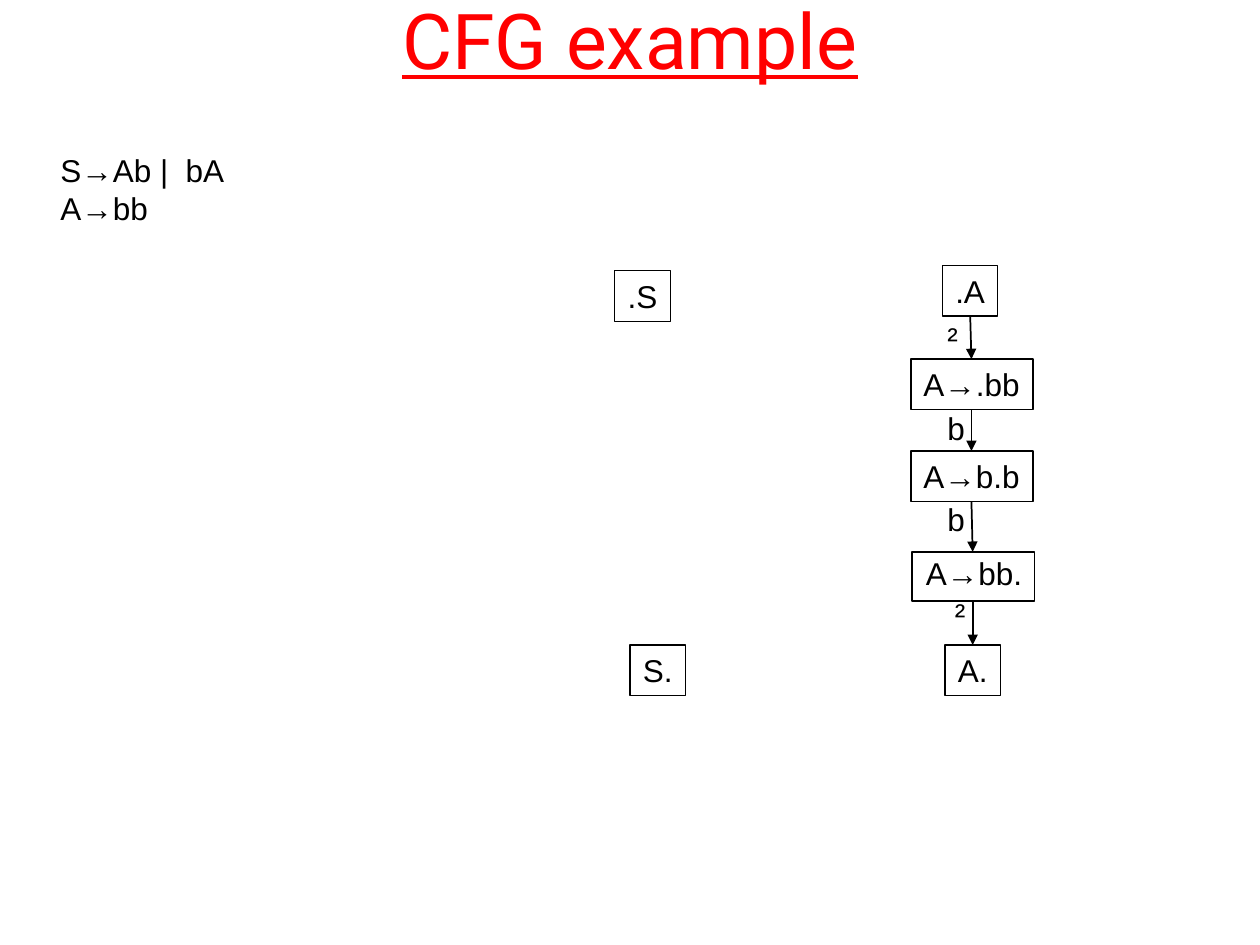
from dataclasses import dataclass

from lxml.etree import SubElement
from pptx import Presentation
from pptx.dml.color import RGBColor
from pptx.enum.shapes import MSO_CONNECTOR as Connector, MSO_SHAPE as Shape
from pptx.enum.text import MSO_ANCHOR as Anchor, MSO_AUTO_SIZE as AutoSize, PP_ALIGN as Align
from pptx.oxml.ns import qn
from pptx.slide import Slide
from pptx.util import Emu, Pt

PX = 9144  # EMU per px, 100 px to the inch
COLORS = {"title": "FF0000", "ink": "000000"}
NODE_HEIGHT = 40
SHORT, LONG = 44, 97  # node widths


@dataclass
class Label:
    text: str
    left: int
    top: int
    width: int
    height: int = NODE_HEIGHT
    wrap: bool = False


@dataclass
class Node:
    text: str
    left: int
    top: int
    width: int
    height: int = NODE_HEIGHT
    line: float = 0.75

    @property
    def center(self) -> int:
        return self.left + self.width // 2

    @property
    def bottom(self) -> int:
        return self.top + self.height


TITLE = Label("CFG example", 50, -32, 900, 125, wrap=True)

# Start and end nodes of S
S_NODES = [Node(".S", 488, 215, SHORT), Node("S.", 500, 512, SHORT)]

# Chain of A from top to bottom, each node linked to the next
A_CHAIN = [
    Node(".A", 748, 211, SHORT),
    Node("A→.bb", 723, 285, LONG),
    Node("A→b.b", 723, 358, LONG),
    Node("", 724, 438, LONG, 39, line=1),
    Node("A.", 750, 512, SHORT),
]

LABELS = [
    Label("S→Ab |  bA\nA→bb", 38, 115, 151, 71),
    Label("²", 742, 248, 30),
    Label("b", 742, 320, 34),
    Label("b", 742, 392, 34),
    Label("²", 748, 467, 30),
    Label("A→bb.", 725, 435, 104, wrap=True),
]


def px(*lengths: int) -> list[Emu]:
    return [Emu(length * PX) for length in lengths]


def rgb(name: str) -> RGBColor:
    return RGBColor.from_string(COLORS[name])


def write(frame, text: str, align: Align, size: int = 18, font: str = "Arial",
          color: str = "ink", underline: bool = False) -> None:
    frame.text = text
    for para in frame.paragraphs:
        para.alignment = align
        for span in para.runs:
            span.font.size = Pt(size)
            span.font.name = font
            span.font.underline = underline
            span.font.color.rgb = rgb(color)


def draw_label(page: Slide, label: Label):
    box = page.shapes.add_textbox(*px(label.left, label.top, label.width, label.height))
    frame = box.text_frame
    frame.word_wrap = label.wrap
    write(frame, label.text, Align.LEFT)
    return frame


def draw_node(page: Slide, node: Node) -> None:
    box = page.shapes.add_shape(
        Shape.RECTANGLE, *px(node.left, node.top, node.width, node.height))
    box.shadow.inherit = False
    box.fill.background()
    box.line.color.rgb = rgb("ink")
    box.line.width = Pt(node.line)
    if node.text:
        frame = box.text_frame
        frame.word_wrap = False
        frame.auto_size = AutoSize.SHAPE_TO_FIT_TEXT
        frame.vertical_anchor = Anchor.TOP
        write(frame, node.text, Align.CENTER if node.width == SHORT else Align.LEFT)


def draw_arrow(page: Slide, start: Node, end: Node) -> None:
    arrow = page.shapes.add_connector(
        Connector.STRAIGHT, *px(start.center, start.bottom, end.center, end.top))
    arrow.line.color.rgb = rgb("ink")
    arrow.line.width = Pt(1)
    SubElement(arrow.line._get_or_add_ln(), qn("a:tailEnd"), type="triangle")
    SubElement(arrow._element.spPr, qn("a:effectLst"))


def main() -> None:
    deck = Presentation()
    deck.slide_width, deck.slide_height = px(1000, 750)
    page = deck.slides.add_slide(deck.slide_layouts[6])

    # Title
    frame = draw_label(page, TITLE)
    frame.vertical_anchor = Anchor.MIDDLE
    write(frame, TITLE.text, Align.CENTER, 44, "Roboto", "title", underline=True)

    # Graph nodes and arrows
    for node in S_NODES + A_CHAIN:
        draw_node(page, node)
    for start, end in zip(A_CHAIN, A_CHAIN[1:]):
        draw_arrow(page, start, end)

    # Grammar, edge labels and the text of the last production
    for label in LABELS:
        draw_label(page, label).auto_size = AutoSize.SHAPE_TO_FIT_TEXT

    deck.save("out.pptx")


if __name__ == "__main__":
    main()
